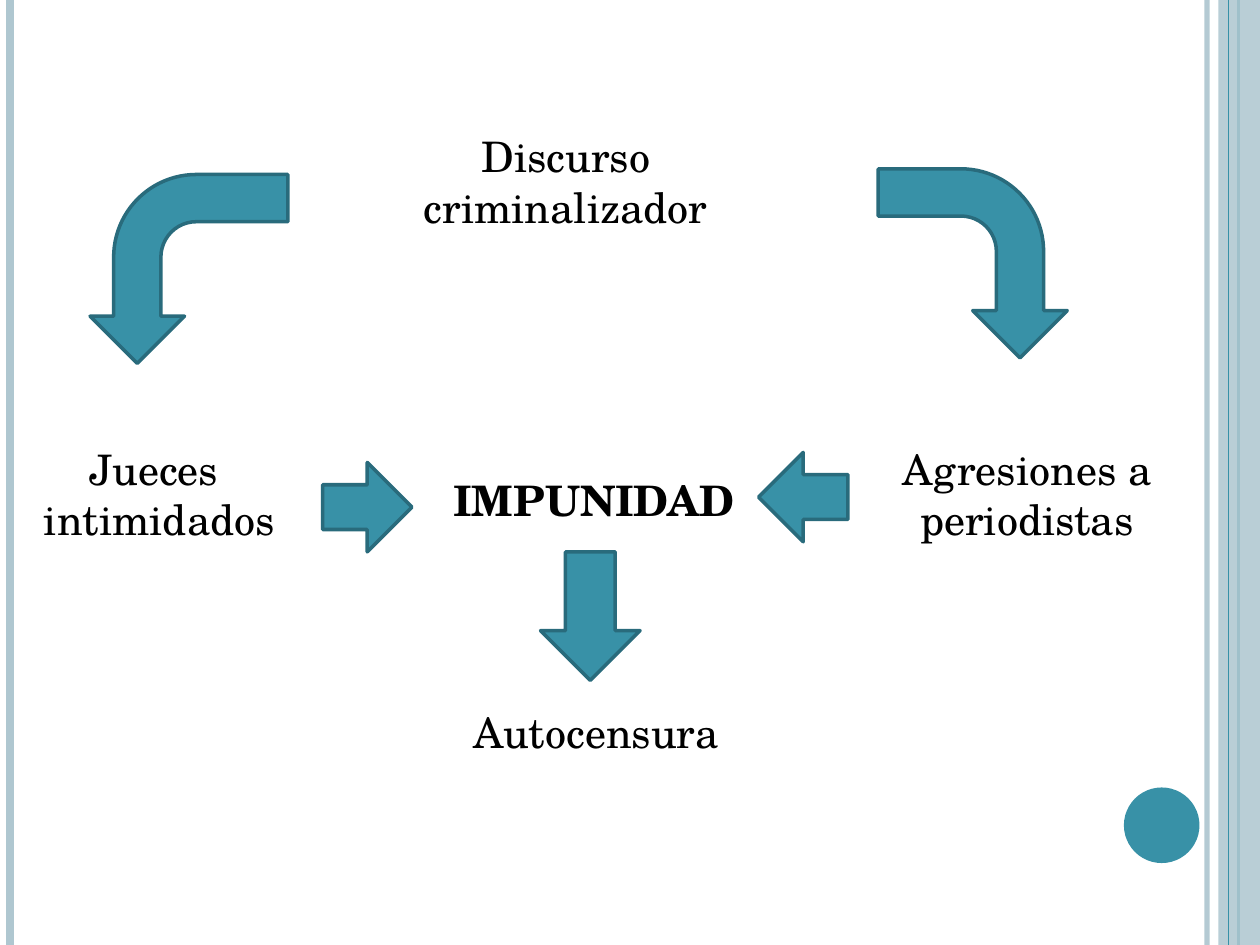
from lxml import etree
from pptx import Presentation
from pptx.dml.color import RGBColor
from pptx.enum.shapes import MSO_CONNECTOR, MSO_SHAPE
from pptx.enum.text import MSO_AUTO_SIZE, PP_ALIGN
from pptx.oxml.ns import qn
from pptx.util import Inches, Pt

STRAIGHT = MSO_CONNECTOR.STRAIGHT
RECTANGLE, OVAL = MSO_SHAPE.RECTANGLE, MSO_SHAPE.OVAL
BENT_ARROW = MSO_SHAPE.BENT_ARROW
RIGHT_ARROW, LEFT_ARROW = MSO_SHAPE.RIGHT_ARROW, MSO_SHAPE.LEFT_ARROW
DOWN_ARROW = MSO_SHAPE.DOWN_ARROW
FIT_SHAPE = MSO_AUTO_SIZE.SHAPE_TO_FIT_TEXT
CENTER, LEFT = PP_ALIGN.CENTER, PP_ALIGN.LEFT

FONT = "TeX Gyre Schola"
TEAL, DARK_TEAL, PALE_BLUE, BLACK = "3891A7", "296B7C", "AFC7D0", "000000"
SLIDE_WIDTH, SLIDE_HEIGHT = 10, 7.5


def set_color(color_format, color, opacity=100):
    color_format.rgb = RGBColor.from_string(color)


def set_opacity(fill, percent):
    color = fill.find(".//" + qn("a:srgbClr"))
    etree.SubElement(color, qn("a:alpha")).set("val", str(percent * 1000))


def add_stripe(slide, x, color, width, opacity=100):
    stripe = slide.shapes.add_connector(
        STRAIGHT, Inches(x), 0, Inches(x), Inches(SLIDE_HEIGHT))
    set_color(stripe.line.color, color)
    stripe.line.width = Pt(width)
    properties = stripe._element.spPr
    if opacity < 100:
        set_opacity(properties, opacity)
    etree.SubElement(properties, qn("a:effectLst"))


def add_filled_shape(slide, kind, box, color):
    shape = slide.shapes.add_shape(kind, *map(Inches, box))
    shape.shadow.inherit = False
    shape.fill.solid()
    set_color(shape.fill.fore_color, color)
    shape.line.fill.background()
    return shape


def add_arrow(slide, kind, box, rotation=0, flipped=False):
    arrow = add_filled_shape(slide, kind, box, TEAL)
    set_color(arrow.line.color, DARK_TEAL)
    arrow.line.width = Pt(2)
    arrow.rotation = rotation
    if flipped:
        arrow._element.spPr.find(qn("a:xfrm")).set("flipV", "1")


def add_label(slide, box, lines, alignment=CENTER, bold=False):
    frame = slide.shapes.add_textbox(*map(Inches, box)).text_frame
    frame.word_wrap = True
    frame.auto_size = FIT_SHAPE
    for index, line in enumerate(lines):
        paragraph = frame.add_paragraph() if index else frame.paragraphs[0]
        paragraph.alignment = alignment
        run = paragraph.add_run()
        run.text = line
        run.font.name = FONT
        run.font.size = Pt(24)
        run.font.bold = bold
        set_color(run.font.color, BLACK)


def add_decoration(slide):
    add_stripe(slide, 9.58, PALE_BLUE, 3, 93)
    add_stripe(slide, 0.08, PALE_BLUE, 4.5)
    add_stripe(slide, 9.83, TEAL, 1.5)
    band = add_filled_shape(
        slide, RECTANGLE, (9.67, 0, 0.33, SLIDE_HEIGHT), PALE_BLUE)
    set_opacity(band._element.spPr, 87)
    add_stripe(slide, 9.75, TEAL, 0.75)
    add_filled_shape(slide, OVAL, (8.92, 6.25, 0.6, 0.6), TEAL)


def main():
    presentation = Presentation()
    presentation.slide_width = Inches(SLIDE_WIDTH)
    presentation.slide_height = Inches(SLIDE_HEIGHT)
    slide = presentation.slides.add_slide(presentation.slide_layouts[6])

    add_decoration(slide)

    add_label(slide, (3.19, 0.99, 2.6, 0.91), ["Discurso criminalizador"])
    add_label(slide, (6.89, 3.47, 2.52, 0.91), ["Agresiones a periodistas"])
    add_label(slide, (3.66, 5.56, 2.83, 0.5), ["Autocensura"], LEFT)
    add_label(slide, (-0.43, 3.47, 3.39, 0.91), ["Jueces ", "intimidados"])
    add_label(slide, (3.5, 3.72, 2.83, 0.5), ["IMPUNIDAD"], LEFT, True)

    add_arrow(slide, BENT_ARROW, (6.97, 1.34, 1.5, 1.5), 90)
    add_arrow(slide, BENT_ARROW, (0.75, 1.35, 1.5, 1.57), 90, True)
    add_arrow(slide, RIGHT_ARROW, (2.56, 3.67, 0.71, 0.71))
    add_arrow(slide, LEFT_ARROW, (6.02, 3.59, 0.71, 0.71))
    add_arrow(slide, DOWN_ARROW, (4.29, 4.38, 0.79, 1.02))

    presentation.save("out.pptx")


if __name__ == "__main__":
    main()
